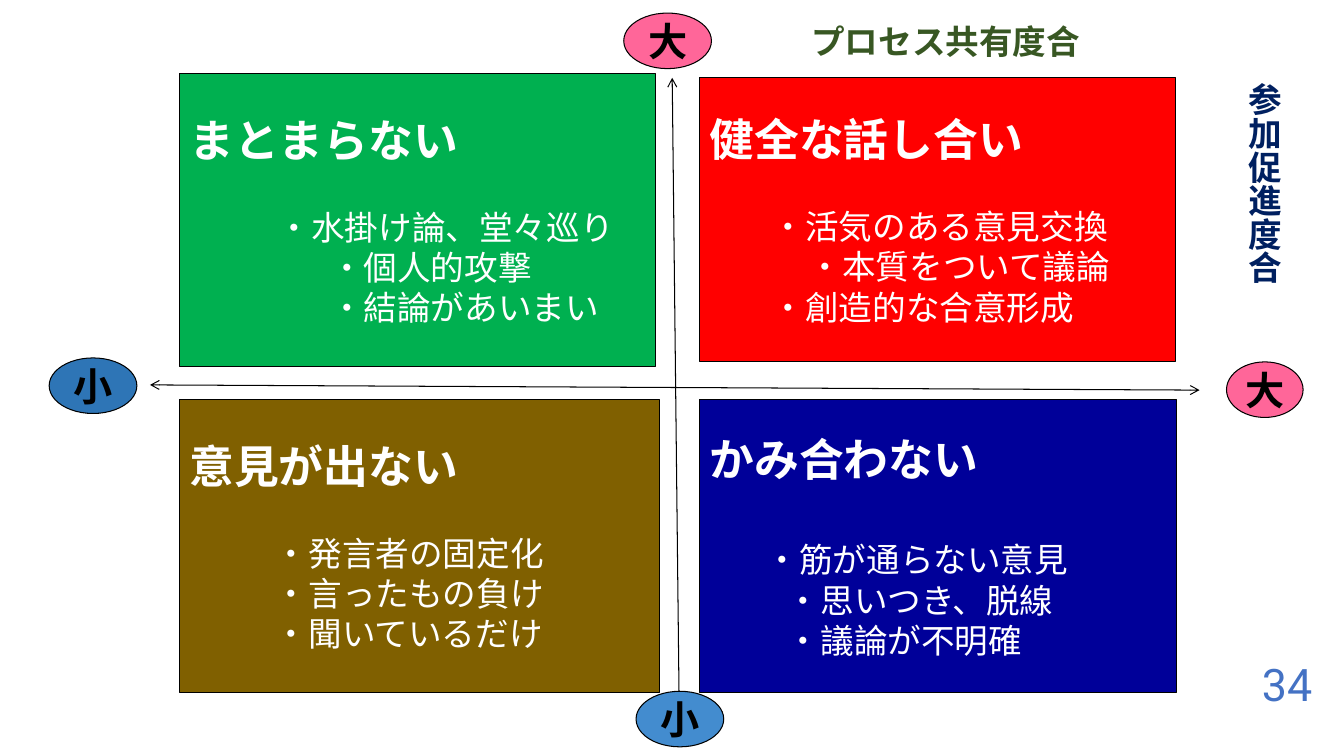
from pptx import Presentation
from pptx.dml.color import RGBColor
from pptx.enum.shapes import MSO_CONNECTOR, MSO_SHAPE
from pptx.enum.text import MSO_ANCHOR, PP_ALIGN
from pptx.oxml.ns import qn
from pptx.util import Cm, Pt
from lxml.etree import SubElement

JAPANESE = "Noto Sans CJK JP"
LEFT, RIGHT, LOWER = 4.52, 17.63, 10.06

quadrants = [
    ("まとまらない", "00B050", (LEFT, 1.85, 11.99, 7.39), 24,
     [("・水掛け論、堂々巡り", 2.23), ("・個人的攻撃", 3.55), ("・結論があいまい", 3.55)]),
    ("意見が出ない", "806000", (LEFT, LOWER, 12.09, 7.39), 24,
     [("・発言者の固定化", 2.16), ("・言ったもの負け", 2.16), ("・聞いているだけ", 2.16)]),
    ("健全な話し合い", "FF0000", (RIGHT, 1.96, 11.99, 7.14), 24,
     [("・活気のある意見交換", 1.57), ("・本質をついて議論", 2.5), ("・創造的な合意形成", 1.57)]),
    ("かみ合わない", "000099", (RIGHT, LOWER, 12.01, 7.39), 32,
     [("・筋が通らない意見", 1.42), ("・思いつき、脱線", 1.95), ("・議論が不明確", 1.95)]),
]
axes = [(16.94, 1.96, 17.12, 18.16), (3.78, 9.7, 30.23, 9.83)]
axis_ends = [
    ("大", "FF6699", (15.72, 0.33, 2.21, 1.4)),
    ("大", "FF6699", (30.91, 9.12, 1.93, 1.4)),
    ("小", "2E75B6", (1.24, 9.02, 2.21, 1.4)),
    ("小", "438CCF", (16.03, 17.42, 2.21, 1.4)),
]
labels = [
    ("プロセス共有度合", (19.53, 0.33, 8.61, 1.4), False,
     dict(size=24, color="385723", bold=True, align=PP_ALIGN.CENTER)),
    ("参加促進度合", (31.32, 1.85, 1.09, 6.6), True,
     dict(size=24, color="002060", bold=True, align=PP_ALIGN.CENTER)),
    ("34", (30.91, 16.46, 2.41, 1.55), False,
     dict(size=32, color="4472C4", font="Roboto", align=PP_ALIGN.RIGHT)),
]


def rgb(value):
    return RGBColor.from_string(value)


def write(paragraph, text, size=24, color="FFFFFF", bold=False, font=JAPANESE,
          align=PP_ALIGN.LEFT, indent=0, before=0):
    paragraph.alignment = align
    paragraph.space_before = Pt(before)
    if indent:
        paragraph._p.get_or_add_pPr().set("marL", str(Cm(indent)))
    run = paragraph.add_run()
    run.text = text
    run.font.size = Pt(size)
    run.font.bold = bold
    run.font.color.rgb = rgb(color)
    run.font.name = font
    SubElement(run._r.get_or_add_rPr(), qn("a:ea")).set("typeface", font)


def add_outlined(kind, box, fill):
    outlined = slide.shapes.add_shape(kind, *map(Cm, box))
    outlined.shadow.inherit = False
    outlined.fill.solid()
    outlined.fill.fore_color.rgb = rgb(fill)
    outlined.line.color.rgb = rgb("000000")
    outlined.line.width = Pt(0.75)
    outlined.text_frame.vertical_anchor = MSO_ANCHOR.MIDDLE
    return outlined.text_frame


def add_axis(ends):
    axis = slide.shapes.add_connector(MSO_CONNECTOR.STRAIGHT, *map(Cm, ends))
    axis.line.color.rgb = rgb("000000")
    axis.line.width = Pt(0.75)
    for end in ("a:headEnd", "a:tailEnd"):
        SubElement(axis.line._get_or_add_ln(), qn(end)).set("type", "arrow")
    SubElement(axis._element.spPr, qn("a:effectLst"))


def add_quadrant(heading, fill, box, gap, points):
    frame = add_outlined(MSO_SHAPE.RECTANGLE, box, fill)
    frame.word_wrap = True
    write(frame.paragraphs[0], heading, size=32, bold=True)
    for order, (point, indent) in enumerate(points):
        write(frame.add_paragraph(), point, indent=indent,
              before=0 if order else gap * 1.2)


def add_axis_end(word, fill, box):
    frame = add_outlined(MSO_SHAPE.OVAL, box, fill)
    frame.word_wrap = False
    write(frame.paragraphs[0], word, size=28, color="000000", bold=True,
          align=PP_ALIGN.CENTER)


def add_label(text, box, vertical, style):
    frame = slide.shapes.add_textbox(*map(Cm, box)).text_frame
    frame.word_wrap = True
    frame.vertical_anchor = MSO_ANCHOR.MIDDLE
    if vertical:
        frame.margin_left = frame.margin_right = 0
        frame._txBody.bodyPr.set("vert", "eaVert")
    write(frame.paragraphs[0], text, **style)


deck = Presentation()
deck.slide_width, deck.slide_height = Cm(33.87), Cm(19.05)
slide = deck.slides.add_slide(deck.slide_layouts[6])

for ends in axes:
    add_axis(ends)
for quadrant in quadrants:
    add_quadrant(*quadrant)
for axis_end in axis_ends:
    add_axis_end(*axis_end)
for label in labels:
    add_label(*label)

deck.save("out.pptx")
